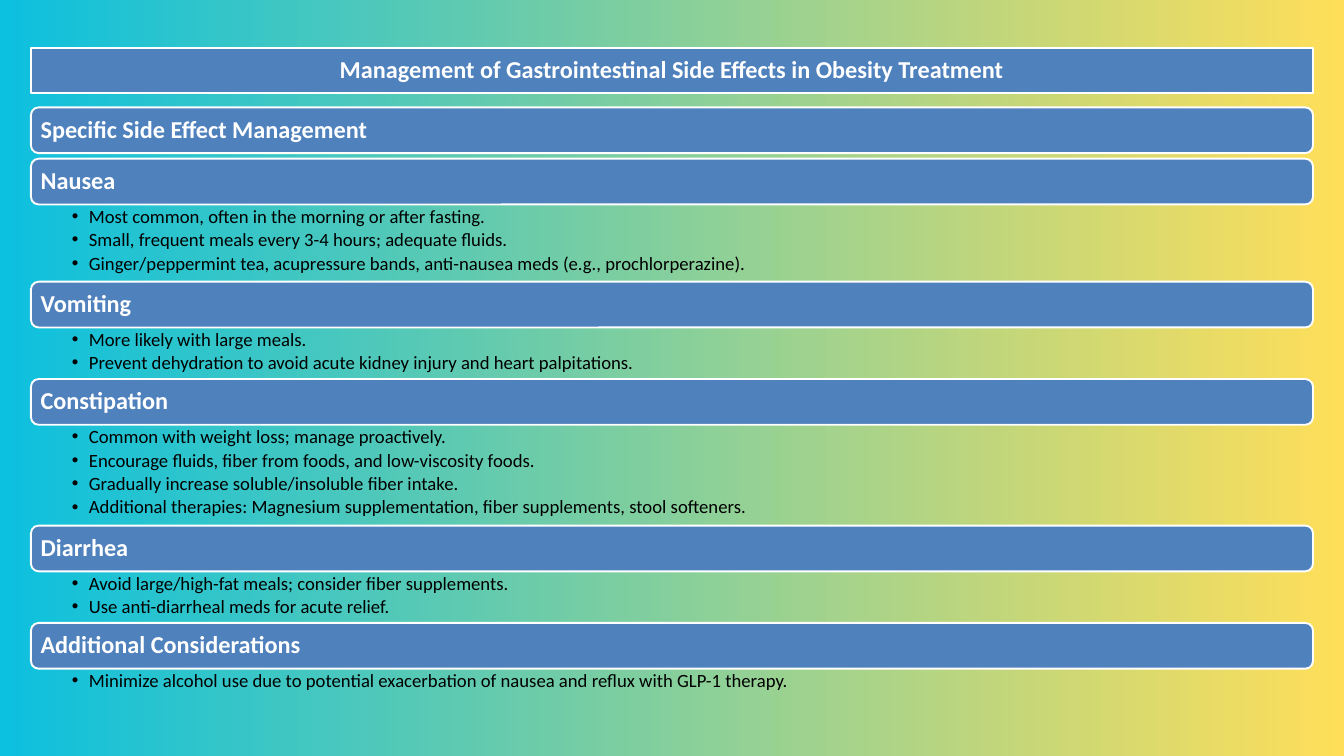
import lxml.etree
import pptx
import pptx.dml.color
import pptx.enum.shapes
import pptx.enum.text
import pptx.oxml.ns
import pptx.util

Cm = pptx.util.Cm
Pt = pptx.util.Pt
RGBColor = pptx.dml.color.RGBColor
MSO_ANCHOR = pptx.enum.text.MSO_ANCHOR
PP_ALIGN = pptx.enum.text.PP_ALIGN
qn = pptx.oxml.ns.qn

CYAN = RGBColor(0x0C, 0xC0, 0xDF)
YELLOW = RGBColor(0xFF, 0xDE, 0x59)
BLUE = RGBColor(0x4F, 0x81, 0xBD)
WHITE = RGBColor(0xFF, 0xFF, 0xFF)
BLACK = RGBColor(0x00, 0x00, 0x00)

FONT = "Calibri"
LEFT, WIDTH = Cm(1.17), Cm(48.46)
BAND_HEIGHT = Cm(1.73)
TITLE_TOP, SUBTITLE_TOP, TOPICS_TOP = Cm(1.8), Cm(4.06), Cm(6)
LIST_HEIGHTS = {1: Cm(1.19), 2: Cm(1.95), 3: Cm(2.92), 4: Cm(3.81)}

TITLE = "Management of Gastrointestinal Side Effects in Obesity Treatment"
SUBTITLE = "Specific Side Effect Management"
TOPICS = {
    "Nausea": [
        "Most common, often in the morning or after fasting.",
        "Small, frequent meals every 3-4 hours; adequate fluids.",
        "Ginger/peppermint tea, acupressure bands, anti-nausea meds (e.g., prochlorperazine).",
    ],
    "Vomiting": [
        "More likely with large meals.",
        "Prevent dehydration to avoid acute kidney injury and heart palpitations.",
    ],
    "Constipation": [
        "Common with weight loss; manage proactively.",
        "Encourage fluids, fiber from foods, and low-viscosity foods.",
        "Gradually increase soluble/insoluble fiber intake.",
        "Additional therapies: Magnesium supplementation, fiber supplements, stool softeners.",
    ],
    "Diarrhea": [
        "Avoid large/high-fat meals; consider fiber supplements.",
        "Use anti-diarrheal meds for acute relief.",
    ],
    "Additional Considerations": [
        "Minimize alcohol use due to potential exacerbation of nausea and reflux with GLP-1 therapy.",
    ],
}


def place(shape, left, top, width, height):
    """Move a shape into the given box."""
    shape.left, shape.top, shape.width, shape.height = left, top, width, height


def set_frame(frame, anchor, left, top, right, bottom):
    """Set wrapping, anchor and insets of a text frame."""
    frame.word_wrap = True
    frame.auto_size = pptx.enum.text.MSO_AUTO_SIZE.NONE
    frame.vertical_anchor = anchor
    frame.margin_left, frame.margin_top = left, top
    frame.margin_right, frame.margin_bottom = right, bottom


def format_paragraph(paragraph, size, color, bold, align, gap):
    """Format a paragraph and its runs."""
    paragraph.alignment = align
    paragraph.line_spacing = 0.9
    paragraph.space_before = Pt(0)
    paragraph.space_after = gap
    for run in paragraph.runs:
        run.font.name = FONT
        run.font.size = size
        run.font.bold = bold
        run.font.color.rgb = color


def add_bullet(paragraph):
    """Give a paragraph a round bullet with a hanging indent."""
    properties = paragraph._p.get_or_add_pPr()
    properties.set("marL", str(Cm(0.64)))
    properties.set("indent", str(-Cm(0.64)))
    lxml.etree.SubElement(properties, qn("a:buFont")).set("typeface", "Arial")
    lxml.etree.SubElement(properties, qn("a:buChar")).set("char", "•")


def round_corners(placeholder):
    """Turn a placed placeholder into a rounded rectangle."""
    geometry = lxml.etree.SubElement(placeholder._element.spPr, qn("a:prstGeom"))
    geometry.set("prst", "roundRect")
    lxml.etree.SubElement(geometry, qn("a:avLst"))


def fill_band(band, text, align=PP_ALIGN.LEFT):
    """Write a heading into a blue band."""
    band.fill.solid()
    band.fill.fore_color.rgb = BLUE
    band.line.color.rgb = WHITE
    band.line.width = Pt(2)
    band.shadow.inherit = False
    band.text_frame.text = text
    set_frame(band.text_frame, MSO_ANCHOR.MIDDLE, *[Cm(0.28)] * 4)
    format_paragraph(band.text_frame.paragraphs[0], Pt(26), WHITE, True, align, Pt(0))


def add_band(slide, text, left, top, width, height):
    """Add a rounded heading band in the given box."""
    rounded = pptx.enum.shapes.MSO_SHAPE.ROUNDED_RECTANGLE
    fill_band(slide.shapes.add_shape(rounded, left, top, width, height), text)


def fill_title(title, text, left, top, width, height):
    """Lay out the title placeholder as a centred band."""
    place(title, left, top, width, height)
    round_corners(title)
    fill_band(title, text, PP_ALIGN.CENTER)


def fill_list(body, items, left, top, width, height):
    """Write a bulleted list into a text shape moved to the given box."""
    place(body, left, top, width, height)
    frame = body.text_frame
    frame.text = "\n".join(items)
    set_frame(frame, MSO_ANCHOR.TOP, Cm(1.55), Cm(0.1), Cm(0.51), Cm(0.1))
    for paragraph in frame.paragraphs:
        paragraph.level = 1
        format_paragraph(paragraph, Pt(20), BLACK, False, PP_ALIGN.LEFT, Pt(3.5))
        add_bullet(paragraph)


def fill_topics(slide, bodies, left, top, width):
    """Stack each topic's band and list downwards from the given corner."""
    for (heading, items), body in zip(TOPICS.items(), bodies):
        add_band(slide, heading, left, top, width, BAND_HEIGHT)
        top += BAND_HEIGHT
        height = LIST_HEIGHTS[len(items)]
        fill_list(body, items, left, top, width, height)
        top += height


def paint_background(slide):
    """Fill the background with a gradient from left to right."""
    fill = slide.background.fill
    fill.gradient()
    fill.gradient_angle = 0
    for stop, position, color in zip(fill.gradient_stops, (0, 1), (CYAN, YELLOW)):
        stop.position = position
        stop.color.rgb = color


def main():
    """Build the slide and save it."""
    presentation = pptx.Presentation()
    presentation.slide_width, presentation.slide_height = Cm(50.8), Cm(28.58)
    comparison_layout = presentation.slide_layouts.get_by_name("Comparison")
    slide = presentation.slides.add_slide(comparison_layout)
    paint_background(slide)
    fill_title(slide.shapes.title, TITLE, LEFT, TITLE_TOP, WIDTH, BAND_HEIGHT)
    add_band(slide, SUBTITLE, LEFT, SUBTITLE_TOP, WIDTH, BAND_HEIGHT)
    bodies = [p for p in slide.placeholders if p.placeholder_format.idx > 0]
    bodies.append(slide.shapes.add_textbox(LEFT, TOPICS_TOP, WIDTH, BAND_HEIGHT))
    fill_topics(slide, bodies, LEFT, TOPICS_TOP, WIDTH)
    presentation.save("out.pptx")


if __name__ == "__main__":
    main()
